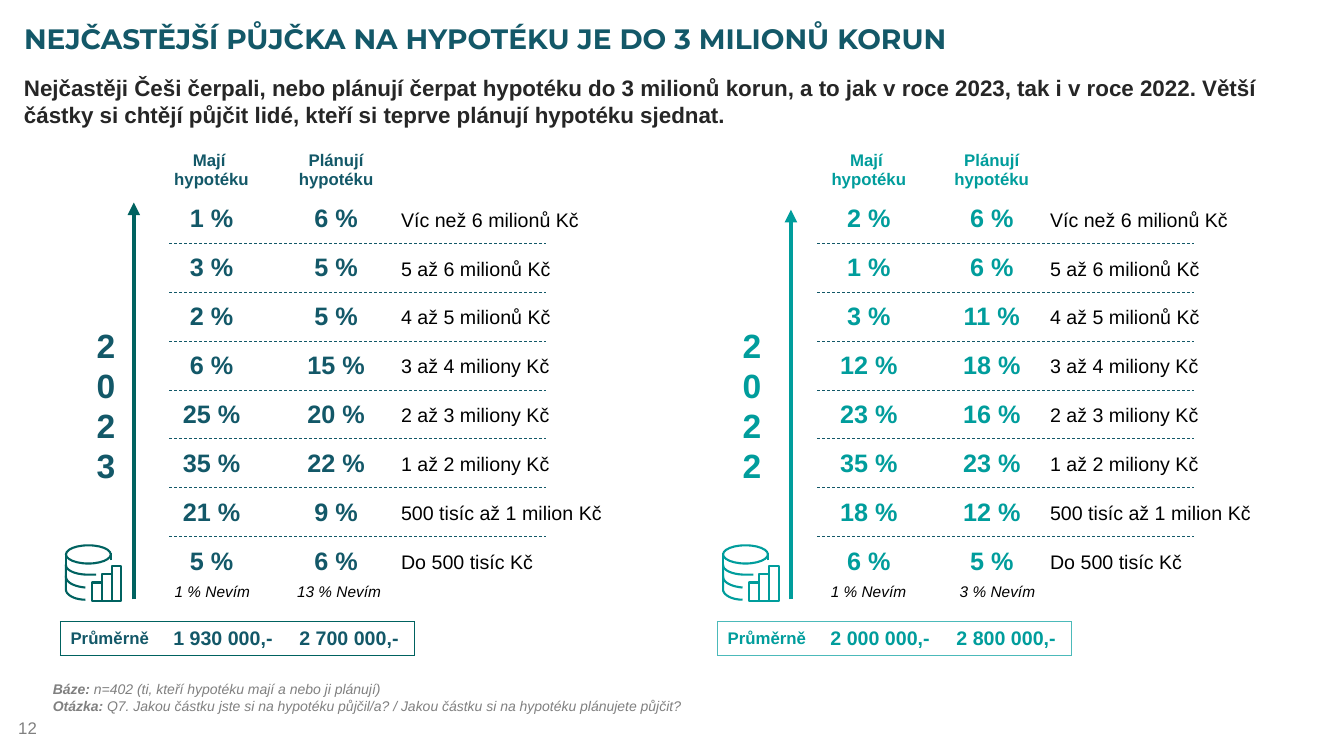
from dataclasses import dataclass

from lxml import etree
from pptx import Presentation
from pptx.dml.color import RGBColor
from pptx.enum.dml import MSO_LINE
from pptx.enum.shapes import MSO_CONNECTOR, MSO_SHAPE
from pptx.enum.text import MSO_ANCHOR, PP_ALIGN
from pptx.oxml.ns import qn
from pptx.util import Pt

STRAIGHT = MSO_CONNECTOR.STRAIGHT
RECT, OVAL = MSO_SHAPE.RECTANGLE, MSO_SHAPE.OVAL
DASH = MSO_LINE.DASH
TOP, MIDDLE = MSO_ANCHOR.TOP, MSO_ANCHOR.MIDDLE
LEFT, CENTER, RIGHT = PP_ALIGN.LEFT, PP_ALIGN.CENTER, PP_ALIGN.RIGHT
PLAIN_TABLE = "{2D5ABB26-0587-4C30-8999-92F81FD0307C}"


@dataclass(frozen=True)
class Theme:
    navy: str = "135868"
    green: str = "006260"
    teal: str = "009D9C"
    light_teal: str = "4CBABA"
    ink: str = "262626"
    black: str = "000000"
    grey: str = "808080"
    font: str = "Arial"
    title_font: str = "Montserrat"
    title: int = 20
    year: int = 24
    value: int = 18
    lead: int = 16
    label: int = 14
    head: int = 12
    unsure: int = 11
    note: int = 10


T = Theme()


@dataclass(frozen=True)
class Panel:
    year: str
    x: float            # left edge of the averages table
    text: str
    line: str
    border: str
    year_dx: float
    table_dx: float
    col_w: float
    rule_dx: float
    label_dx: float
    arrow_top: float
    values: tuple
    unsure: tuple       # (offset, width, text)
    averages: tuple


PANELS = (
    Panel("2022", 512.6, T.teal, T.teal, T.light_teal, 10.8, 64.1, 87.8, 71.3, 230.4, 149.8,
          ((2, 6), (1, 6), (3, 11), (12, 18), (23, 16), (35, 23), (18, 12), (6, 5)),
          ((73.5, 68.4, "1 % Nevím"), (165.6, 68.4, "3 % Nevím")),
          ("2 000 000,-", "2 800 000,-")),
    Panel("2023", 43.2, T.navy, T.green, T.green, 18.7, 63.4, 89, 77.8, 236.2, 144.7,
          ((1, 6), (3, 5), (2, 5), (6, 15), (25, 20), (35, 22), (21, 9), (5, 6)),
          ((74.2, 68.4, "1 % Nevím"), (161.3, 74.9, "13 % Nevím")),
          ("1 930 000,-", "2 700 000,-")),
)
HEADS = ("Mají \vhypotéku", "Plánují hypotéku")
BANDS = ("Víc než 6 milionů Kč", "5 až 6 milionů Kč", "4 až 5 milionů Kč", "3 až 4 miliony Kč",
         "2 až 3 miliony Kč", "1 až 2 miliony Kč", "500 tisíc až 1 milion Kč", "Do 500 tisíc Kč")
GRID_TOP, ROW_H = 103.7, 34.96


def apply(obj, fmt):
    for name, value in fmt.items():
        setattr(obj, name, value)


def write(p, text, size, color, align=LEFT, name=T.font, bold=False, italic=False):
    p.alignment = align
    for i, part in enumerate(text.split("\v")):
        if i:
            p.add_line_break()
            etree.SubElement(p._p[-1], qn("a:rPr"), sz=str(size * 100))
        r = p.add_run()
        r.text = part
        apply(r.font, dict(size=Pt(size), name=name, bold=bold, italic=italic))
        r.font.color.rgb = RGBColor.from_string(color)


def frame(sp, inset=(7.2, 3.6), anchor=TOP, wrap=True):
    tf = sp.text_frame
    x, y = map(Pt, inset)
    apply(tf, dict(margin_left=x, margin_right=x, margin_top=y, margin_bottom=y,
                   vertical_anchor=anchor, word_wrap=wrap))
    return tf


def text_box(s, x, y, w, h, **layout):
    return frame(s.shapes.add_textbox(Pt(x), Pt(y), Pt(w), Pt(h)), **layout)


def line(shapes, x1, y1, x2, y2, color, width, dash=None, arrow=False):
    c = shapes.add_connector(STRAIGHT, Pt(x1), Pt(y1), Pt(x2), Pt(y2))
    apply(c.line, dict(width=Pt(width), dash_style=dash))
    c.line.color.rgb = RGBColor.from_string(color)
    if arrow:
        etree.SubElement(c.line._get_or_add_ln(), qn("a:tailEnd"), type="triangle")
    etree.SubElement(c._element.spPr, qn("a:effectLst"))


def table(s, x, y, widths, heights):
    t = s.shapes.add_table(len(heights), len(widths), Pt(x), Pt(y),
                           Pt(sum(widths)), Pt(sum(heights))).table
    apply(t, dict(first_row=False, horz_banding=False))
    t._tbl.tblPr.find(qn("a:tableStyleId")).text = PLAIN_TABLE
    for col, w in zip(t.columns, widths):
        col.width = Pt(w)
    for row, h in zip(t.rows, heights):
        row.height = Pt(h)
    for cell in t.iter_cells():
        cell.vertical_anchor = MIDDLE
        cell.fill.background()
    return t


def border(cell, sides, color):
    tc_pr = cell._tc.get_or_add_tcPr()
    for i, side in enumerate(sides):
        ln = etree.Element(qn("a:ln" + side), w=str(Pt(1)))
        fill = etree.SubElement(ln, qn("a:solidFill"))
        etree.SubElement(fill, qn("a:srgbClr"), val=color)
        tc_pr.insert(i, ln)


def outline(sp, color):
    sp.shadow.inherit = False
    sp.fill.background()
    sp.line.width = Pt(1.5)
    sp.line.color.rgb = RGBColor.from_string(color)


def bezier(a, b, c, d, steps=10):
    for t in (i / steps for i in range(steps + 1)):
        u = 1 - t
        yield tuple(u**3 * i + 3 * u * u * t * j + 3 * u * t * t * k + t**3 * m
                    for i, j, k, m in zip(a, b, c, d))


def coin_icon(s, x, y, color):
    shapes = s.shapes.add_group_shape().shapes
    # Rising bars and the top of the coin stack
    boxes = [(RECT, 18.5 + 7.05 * i, 26.6 - 5.8 * i, 7.05, 13 + 5.8 * i) for i in range(3)]
    for kind, dx, dy, w, h in boxes + [(OVAL, 0, 0, 32, 13)]:
        outline(shapes.add_shape(kind, Pt(x + dx), Pt(y + dy), Pt(w), Pt(h)), color)
    # Coin edges: a straight start, then a curve
    for start, *curve in (((21.6, 21), (15.8, 21), (7.2, 21), (0, 18), (0, 14.2)),
                          ((0, 21.6), (0, 31.7), (0, 35.3), (6, 38.9), (13.9, 38.9)),
                          ((0, 13.7), (0, 22.3), (0, 26.6), (6, 29.5), (13.9, 30.2))):
        points = [(Pt(x + dx), Pt(y + dy)) for dx, dy in [start, *bezier(*curve)]]
        fb = shapes.build_freeform(*points[0])
        fb.add_line_segments(points[1:], close=False)
        outline(fb.convert_to_shape(), color)
    for dx, bottom in ((31.9, 10.8), (0, 14.4)):
        line(shapes, x + dx, y + bottom, x + dx, y + 5.8, color, 1.5)


def panel(s, d):
    # Shares by loan size
    t = table(s, d.x + d.table_dx, GRID_TOP, [d.col_w] * 2, [ROW_H] * 9)
    for i, row in enumerate((HEADS, *d.values)):
        for j, value in enumerate(row):
            cell = t.cell(i, j)
            apply(cell, dict.fromkeys(("margin_left", "margin_right", "margin_top"), Pt(0.7)))
            cell.margin_bottom = 0
            write(cell.text_frame.paragraphs[0], f"{value} %" if i else value,
                  T.value if i else T.head, d.text, CENTER, bold=True)
    # Loan-size labels and row rules
    for i, band in enumerate(BANDS):
        tf = text_box(s, d.x + d.label_dx, 144.7 + i * ROW_H, 224, 24.2)
        write(tf.paragraphs[0], band, T.label, T.black)
        if i:
            y = GRID_TOP + (i + 1) * ROW_H
            line(s.shapes, d.x + d.rule_dx, y, d.x + d.rule_dx + 269.3, y, T.navy, 0.5, DASH)
    # Axis arrow, year and icon
    line(s.shapes, d.x + 52.4, 428.2, d.x + 52.4, d.arrow_top, d.line, 3, arrow=True)
    tf = text_box(s, d.x + d.year_dx, 228.2, 32.4, 123.8)
    write(tf.paragraphs[0], d.year, T.year, d.text, bold=True)
    coin_icon(s, d.x + 3.9, 389.5, d.line)
    # Undecided shares
    for dx, w, text in d.unsure:
        tf = text_box(s, d.x + dx, 412, w, 20.6, wrap=False)
        write(tf.paragraphs[0], text, T.unsure, T.black, RIGHT, italic=True)
    # Averages
    t = table(s, d.x, 444.2, (73.4, 90, 89.3), (23.8,))
    for j, (text, sides) in enumerate(zip(("Průměrně", *d.averages), ("LTB", "TB", "RTB"))):
        cell = t.cell(0, j)
        border(cell, sides, d.border)
        write(cell.text_frame.paragraphs[0], text, T.label if j else T.head, d.text, bold=True)


def main():
    prs = Presentation()
    prs.slide_width, prs.slide_height = Pt(960), Pt(540)
    s = prs.slides.add_slide(prs.slide_layouts[5])

    # Title and lead
    title = s.shapes.title
    apply(title, dict(left=Pt(10), top=Pt(10), width=Pt(939.6), height=Pt(35.3)))
    write(frame(title, anchor=MIDDLE).paragraphs[0],
          "NEJČASTĚJŠÍ PŮJČKA NA HYPOTÉKU JE DO 3 MILIONŮ KORUN",
          T.title, T.navy, name=T.title_font, bold=True)
    tf = text_box(s, 10, 49.5, 906.5, 50.4)
    write(tf.paragraphs[0],
          "Nejčastěji Češi čerpali, nebo plánují čerpat hypotéku do 3 milionů korun, a to jak v roce "
          "2023, tak i v roce 2022. Větší částky si chtějí půjčit lidé, kteří si teprve plánují "
          "hypotéku sjednat.", T.lead, T.ink, bold=True)

    for d in PANELS:
        panel(s, d)

    # Footnotes and slide number
    tf = text_box(s, 37.8, 486, 555.8, 24.5, inset=(0, 0))
    notes = (("Báze: ", "n=402 (ti, kteří hypotéku mají a nebo ji plánují)"),
             ("Otázka: ", "Q7. Jakou částku jste si na hypotéku půjčil/a? / "
                          "Jakou částku si na hypotéku plánujete půjčit?"))
    for i, (head, text) in enumerate(notes):
        p = tf.add_paragraph() if i else tf.paragraphs[0]
        write(p, head, T.note, T.grey, bold=True, italic=True)
        write(p, text, T.note, T.grey, italic=True)
    tf = text_box(s, 3.6, 505.4, 223.9, 28.8, inset=(9.4, 5), anchor=MIDDLE)
    write(tf.paragraphs[0], "12", T.head, T.grey)

    prs.save("out.pptx")


if __name__ == "__main__":
    main()
